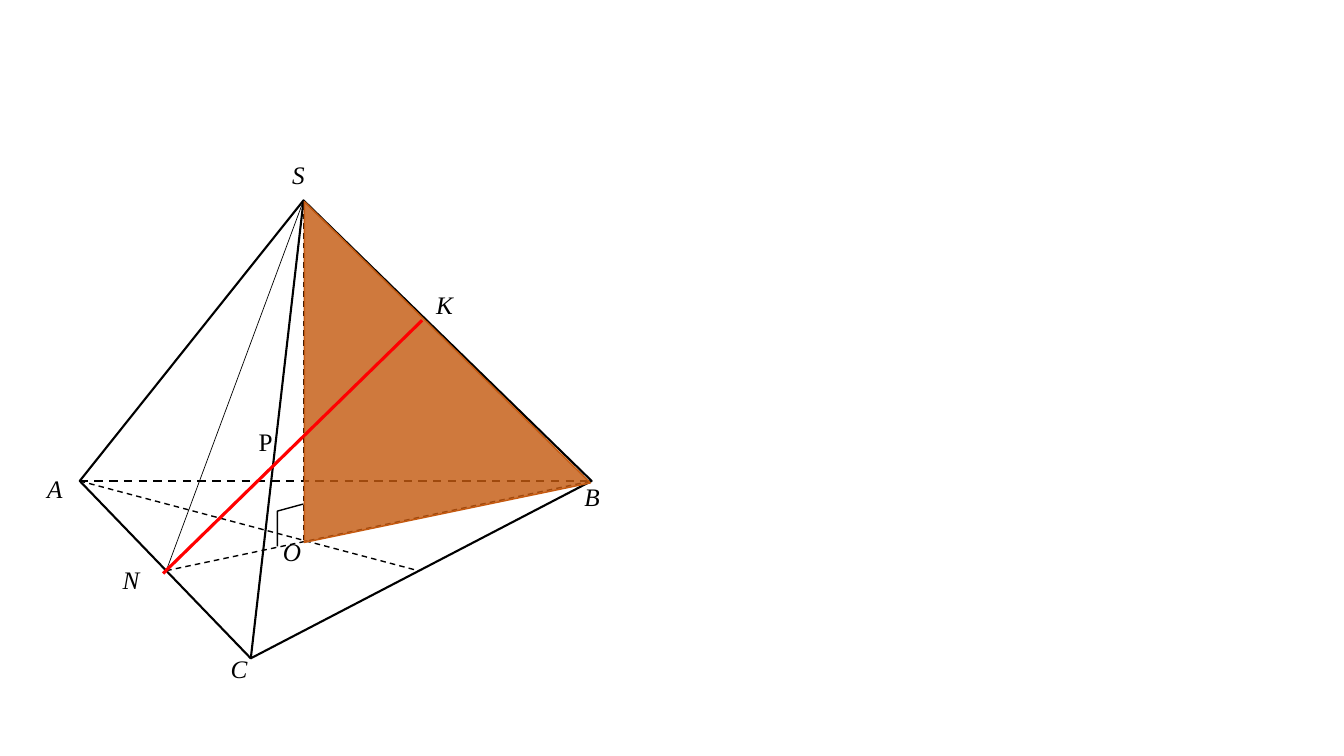
from dataclasses import dataclass
from typing import Any

from lxml import etree
from pptx import Presentation
from pptx.dml.color import RGBColor
from pptx.enum.dml import MSO_LINE
from pptx.enum.shapes import MSO_CONNECTOR
from pptx.enum.text import MSO_AUTO_SIZE
from pptx.oxml.ns import qn
from pptx.util import Cm, Pt

DASH = MSO_LINE.DASH
SOLID = MSO_LINE.SOLID
STRAIGHT = MSO_CONNECTOR.STRAIGHT
FIT = MSO_AUTO_SIZE.SHAPE_TO_FIT_TEXT
Point = tuple[float, float]


@dataclass(frozen=True)
class Theme:
    ink: RGBColor = RGBColor(0, 0, 0)
    face: RGBColor = RGBColor(0xC5, 0x5A, 0x11)
    cut: RGBColor = RGBColor(0xFF, 0, 0)
    opaque: int = 81
    font: str = "Times New Roman"
    size: float = 18
    hair: float = 0.5
    thin: float = 1
    edge: float = 1.5
    bold: float = 2.25


THEME = Theme()


@dataclass(frozen=True)
class Label:
    text: str
    left: float
    top: float
    width: float
    height: float = 1.14
    italic: bool = True


@dataclass(frozen=True)
class Line:
    start: Point
    end: Point
    weight: float
    dash: Any = SOLID
    color: RGBColor = THEME.ink


@dataclass(frozen=True)
class Outline:
    points: tuple[Point, ...]
    weight: float
    closed: bool = True
    color: RGBColor = THEME.ink
    fill: RGBColor | None = None


def assign(target: Any, values: dict[str, Any]) -> None:
    for name, value in values.items():
        setattr(target, name, value)


def draw_label(shapes: Any, label: Label) -> None:
    box = shapes.add_textbox(Cm(label.left), Cm(label.top),
                             Cm(label.width), Cm(label.height))
    assign(box.text_frame, {"word_wrap": False, "auto_size": FIT})
    run = box.text_frame.paragraphs[0].add_run()
    run.text = label.text
    assign(run.font, {"name": THEME.font, "size": Pt(THEME.size),
                      "italic": label.italic})
    run.font.color.rgb = THEME.ink


def draw_line(shapes: Any, line: Line) -> None:
    ends = [Cm(value) for value in line.start + line.end]
    shape = shapes.add_connector(STRAIGHT, *ends)
    etree.SubElement(shape.line._get_or_add_ln().getparent(), qn("a:effectLst"))
    assign(shape.line, {"width": Pt(line.weight), "dash_style": line.dash})
    shape.line.color.rgb = line.color


def draw_outline(shapes: Any, outline: Outline) -> None:
    first, *rest = [(Cm(x), Cm(y)) for x, y in outline.points]
    pen = shapes.build_freeform(*first)
    pen.add_line_segments(rest, close=outline.closed)
    shape = pen.convert_to_shape()
    shape.shadow.inherit = False
    shape.line.width = Pt(outline.weight)
    shape.line.color.rgb = outline.color
    if outline.fill is None:
        shape.fill.background()
        return
    shape.fill.solid()
    shape.fill.fore_color.rgb = outline.fill
    tint = shape.fill._xPr.find(qn("a:solidFill"))[0]
    etree.SubElement(tint, qn("a:alpha"), val=str(THEME.opaque * 1000))


# Corners of the pyramid and points on it
S, A, B, C = (7.65, 5.05), (2.01, 12.12), (14.91, 12.12), (6.32, 16.59)
N, M, O, K = (4.19, 14.38), (10.54, 14.38), (7.65, 13.61), (10.64, 8.07)

LABELS = (
    Label("O", 6.88, 13.39, 1.45, 1.57),
    Label("P", 6.27, 10.62, 0.99, italic=False),
    Label("А", 0.94, 11.79, 1.32, 1.57),
    Label("B", 14.48, 12.01, 1.04),
    Label("C", 5.56, 16.33, 1.07),
    Label("S", 7.11, 3.89, 1.19, 1.57),
    Label("N", 2.84, 14.1, 1.07),
    Label("K", 10.74, 7.16, 1.07),
)
HIDDEN = (
    Line(A, B, THEME.edge, DASH),
    Line(N, B, THEME.thin, DASH),
    Line(A, M, THEME.thin, DASH),
    Line(O, S, THEME.thin, DASH),
)
RIM = Outline((S, B, C, A), THEME.edge)
ANGLE = Outline(((7.65, 12.7), (6.99, 12.88), (6.99, 13.77)), THEME.thin, False)
FRONT = (
    Line(C, S, THEME.edge),
    Line(N, K, THEME.hair, DASH),
    Line(S, N, THEME.hair),
)
FACE = Outline(((7.67, 13.67), (7.67, 5.08), (14.88, 12.17)), THEME.thin,
               color=THEME.face, fill=THEME.face)
CUT = Line((4.11, 14.45), K, THEME.bold, color=THEME.cut)


def main() -> None:
    deck = Presentation()
    assign(deck, {"slide_width": Cm(33.87), "slide_height": Cm(19.05)})
    slide = deck.slides.add_slide(deck.slide_layouts[6])

    # Wire frame with its letters
    frame = slide.shapes.add_group_shape().shapes
    for label in LABELS:
        draw_label(frame, label)
    for line in HIDDEN:
        draw_line(frame, line)
    for outline in (RIM, ANGLE):
        draw_outline(frame, outline)
    for line in FRONT:
        draw_line(frame, line)

    # Shaded section and the line across it
    draw_outline(slide.shapes, FACE)
    draw_line(slide.shapes, CUT)
    deck.save("out.pptx")


if __name__ == "__main__":
    main()
